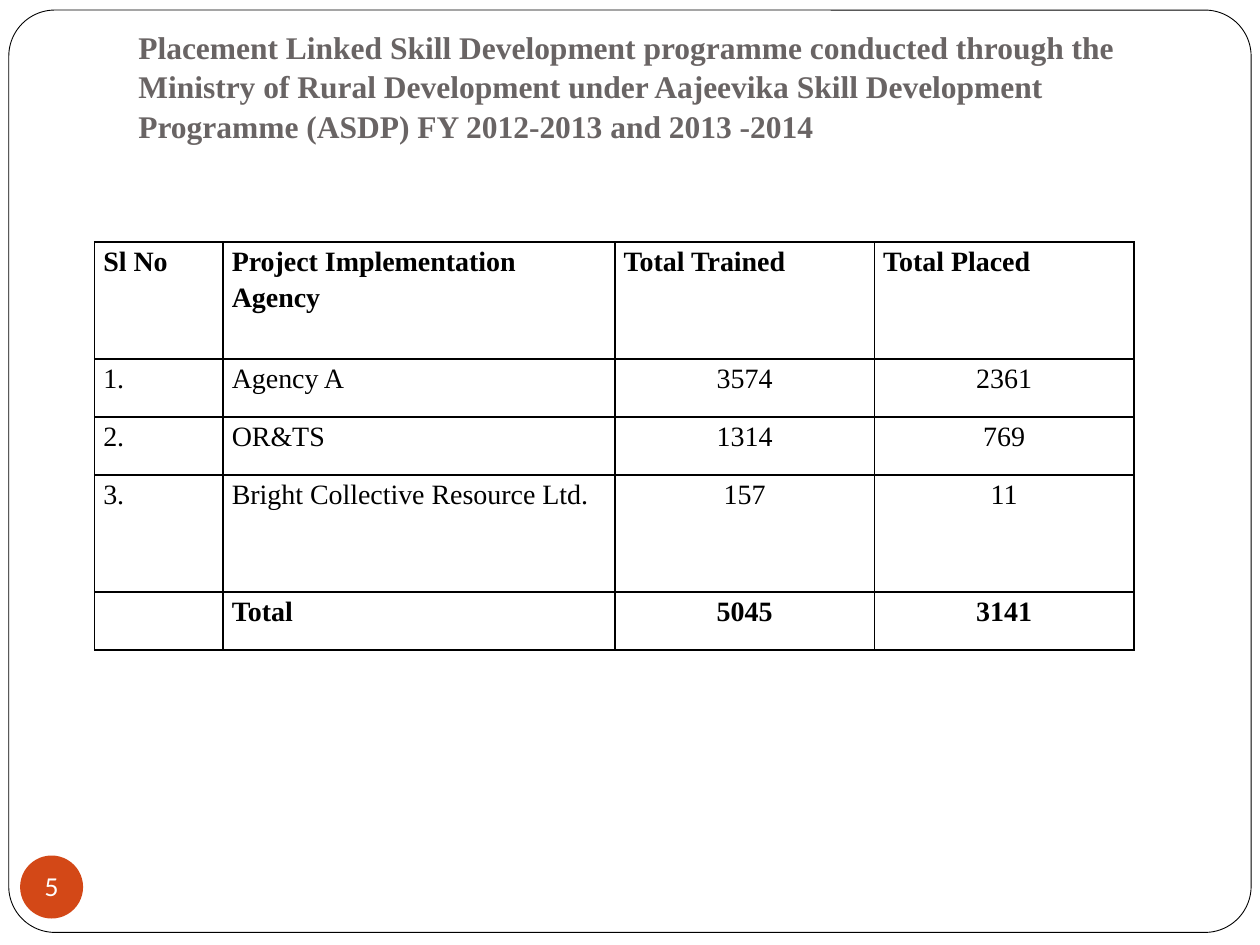
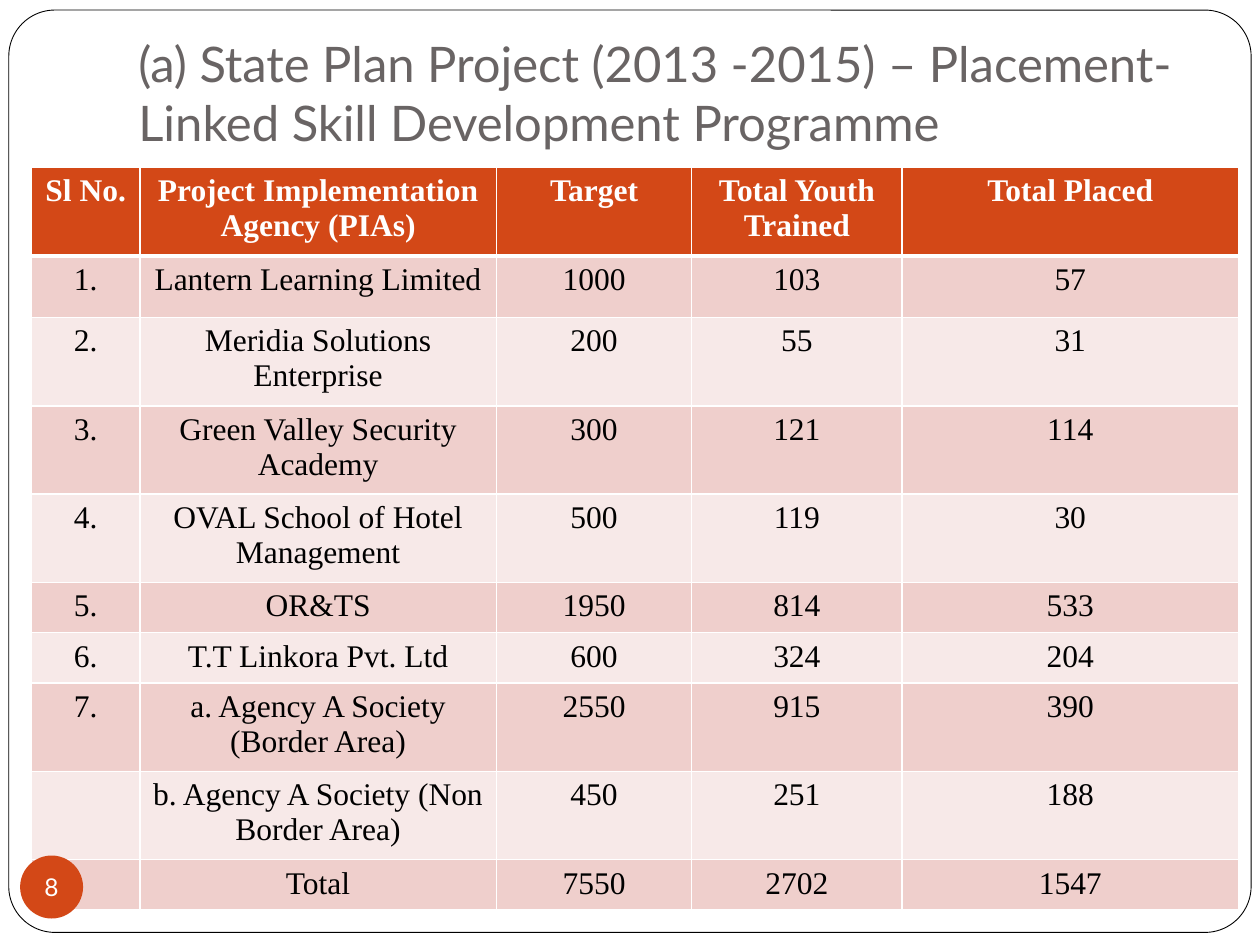
"""Build two slides of skill development placement tables."""
from dataclasses import dataclass
from lxml import etree
from pptx import Presentation
from pptx.dml.color import RGBColor
from pptx.enum import shapes, text
from pptx.oxml import ns
from pptx.util import Inches, Pt


@dataclass(frozen=True)
class Theme:
    accent: str = "D34817"
    title: str = "696464"
    ink: str = "000000"
    paper: str = "FFFFFF"
    band_dark: str = "EFCFCC"
    band_light: str = "F7E9E8"
    sans: str = "Lato"
    serif: str = "Times New Roman"
    badge_size: int = 14


THEME = Theme()
LEFT, CENTER = text.PP_ALIGN.LEFT, text.PP_ALIGN.CENTER

SLIDES = [
    {
        "number": "5",
        "title": "Placement Linked Skill Development programme conducted through the "
                 "Ministry of Rural Development under Aajeevika Skill Development "
                 "Programme (ASDP) FY 2012-2013 and 2013 -2014",
        "title_format": {"name": THEME.serif, "size": 18, "bold": True},
        "title_bottom": 1.25,
        "title_spacing": 1.05,
        "origin": (0.75, 1.92),
        "columns": [1.02, 3.11, 2.06, 2.06],
        "heights": [0.93, 0.46, 0.46, 0.93, 0.46],
        "rows": [
            ("Sl No", "Project Implementation Agency", "Total Trained", "Total Placed"),
            ("1.", "Agency A", "3574", "2361"),
            ("2.", "OR&TS", "1314", "769"),
            ("3.", "Bright Collective Resource Ltd.", "157", "11"),
            ("", "Total", "5045", "3141"),
        ],
        "style": {
            "size": 16, "spacing": 1.15, "margins": (0.07, 0), "border": THEME.ink,
            "header_rule": 1, "header_fill": None, "header_ink": THEME.ink,
            "bands": (None, None), "bold_rows": (0, 4),
            "centered": lambda row, column: row > 0 and column > 1,
        },
    },
    {
        "number": "8",
        "title": "(a) State Plan Project (2013 -2015) – Placement-Linked Skill "
                 "Development Programme",
        "title_format": {"name": THEME.sans, "size": 28, "bold": False},
        "title_bottom": 1.3,
        "title_spacing": 1.0,
        "origin": (0.25, 1.33),
        "columns": [0.86, 2.83, 1.55, 1.67, 2.67],
        "heights": [0.69, 0.49, 0.69, 0.69, 0.69, 0.4, 0.4, 0.69, 0.69, 0.4],
        "rows": [
            ("Sl No.", "Project Implementation Agency (PIAs)", "Target",
             "Total Youth Trained", "Total Placed"),
            ("1.", "Lantern Learning Limited", "1000", "103", "57"),
            ("2.", "Meridia Solutions Enterprise", "200", "55", "31"),
            ("3.", "Green Valley Security Academy", "300", "121", "114"),
            ("4.", "OVAL School of Hotel Management", "500", "119", "30"),
            ("5.", "OR&TS", "1950", "814", "533"),
            ("6.", "T.T Linkora Pvt. Ltd", "600", "324", "204"),
            ("7.", "a. Agency A Society (Border Area)", "2550", "915", "390"),
            ("", "b. Agency A Society (Non Border Area)", "450", "251", "188"),
            ("", "Total", "7550", "2702", "1547"),
        ],
        "style": {
            "size": 18, "spacing": 1.0, "margins": (0.1, 0.05), "border": THEME.paper,
            "header_rule": 3, "header_fill": THEME.accent, "header_ink": THEME.paper,
            "bands": (THEME.band_dark, THEME.band_light), "bold_rows": (0,),
            "centered": lambda row, column: True,
        },
    },
]


def apply(target, values):
    for name, value in values.items():
        setattr(target, name, value)


def paint(fill, color):
    if color:
        fill.solid()
        fill.fore_color.rgb = RGBColor.from_string(color)
    else:
        fill.background()


def write(frame, words, name, size, color, bold=False, alignment=LEFT, spacing=1.0):
    paragraph = frame.paragraphs[0]
    apply(paragraph, {"alignment": alignment, "line_spacing": spacing})
    if words:
        run = paragraph.add_run()
        run.text = words
        apply(run.font, {"name": name, "size": Pt(size), "bold": bold})
        run.font.color.rgb = RGBColor.from_string(color)


def set_margins(target, left, top, right, bottom):
    apply(target, {"margin_left": Inches(left), "margin_top": Inches(top),
                   "margin_right": Inches(right), "margin_bottom": Inches(bottom)})


def add_plain_shape(slide, kind, box, color):
    shape = slide.shapes.add_shape(kind, *map(Inches, box))
    shape.shadow.inherit = False
    paint(shape.fill, color)
    shape.line.fill.background()
    return shape


def add_frame(slide):
    frame = add_plain_shape(slide, shapes.MSO_SHAPE.ROUNDED_RECTANGLE,
                            (0.07, 0.08, 9.86, 7.32), THEME.paper)
    frame.adjustments[0] = 0.05
    paint(frame.line.fill, THEME.ink)
    frame.line.width = Pt(0.5)


def add_title(slide, content):
    height = 1.22
    box = slide.shapes.add_textbox(Inches(1), Inches(content["title_bottom"] - height),
                                   Inches(8.5), Inches(height))
    frame = box.text_frame
    apply(frame, {"word_wrap": True, "vertical_anchor": text.MSO_ANCHOR.BOTTOM})
    set_margins(frame, 0.1, 0.05, 0.1, 0.1)
    write(frame, content["title"], color=THEME.title,
          spacing=content["title_spacing"], **content["title_format"])


def add_badge(slide, number):
    badge = add_plain_shape(slide, shapes.MSO_SHAPE.OVAL, (0.16, 6.79, 0.5, 0.5), THEME.accent)
    frame = badge.text_frame
    apply(frame, {"word_wrap": False, "vertical_anchor": text.MSO_ANCHOR.MIDDLE})
    set_margins(frame, 0, 0, 0, 0)
    write(frame, number, THEME.sans, THEME.badge_size, THEME.paper, alignment=CENTER)


def set_borders(cell, color, top, bottom):
    properties = cell._tc.get_or_add_tcPr()
    for position, (side, width) in enumerate(zip("LRTB", (1, 1, top, bottom))):
        line = etree.Element(ns.qn(f"a:ln{side}"), w=str(Pt(width)))
        fill = etree.SubElement(line, ns.qn("a:solidFill"))
        etree.SubElement(fill, ns.qn("a:srgbClr"), val=color)
        properties.insert(position, line)


def add_table(slide, content):
    rows, columns, heights = (content[key] for key in ("rows", "columns", "heights"))
    style = content["style"]
    box = (*content["origin"], sum(columns), sum(heights))
    table = slide.shapes.add_table(len(rows), len(columns), *map(Inches, box)).table
    apply(table, {"first_row": False, "horz_banding": False})
    for column, width in zip(table.columns, columns):
        column.width = Inches(width)
    for row, height in zip(table.rows, heights):
        row.height = Inches(height)
    for row_index, row in enumerate(rows):
        header = row_index == 0
        fill = style["header_fill"] if header else style["bands"][(row_index - 1) % 2]
        for column_index, words in enumerate(row):
            cell = table.cell(row_index, column_index)
            set_margins(cell, *style["margins"] * 2)
            paint(cell.fill, fill)
            set_borders(cell, style["border"],
                        top=style["header_rule"] if row_index == 1 else 1,
                        bottom=style["header_rule"] if header else 1)
            write(cell.text_frame, words, THEME.serif, style["size"],
                  style["header_ink"] if header else THEME.ink,
                  bold=row_index in style["bold_rows"],
                  alignment=CENTER if style["centered"](row_index, column_index) else LEFT,
                  spacing=style["spacing"])


def main():
    presentation = Presentation()
    apply(presentation, {"slide_width": Inches(10), "slide_height": Inches(7.5)})
    for content in SLIDES:
        slide = presentation.slides.add_slide(presentation.slide_layouts[6])
        add_frame(slide)
        add_title(slide, content)
        add_table(slide, content)
        add_badge(slide, content["number"])
    presentation.save("out.pptx")


if __name__ == "__main__":
    main()
